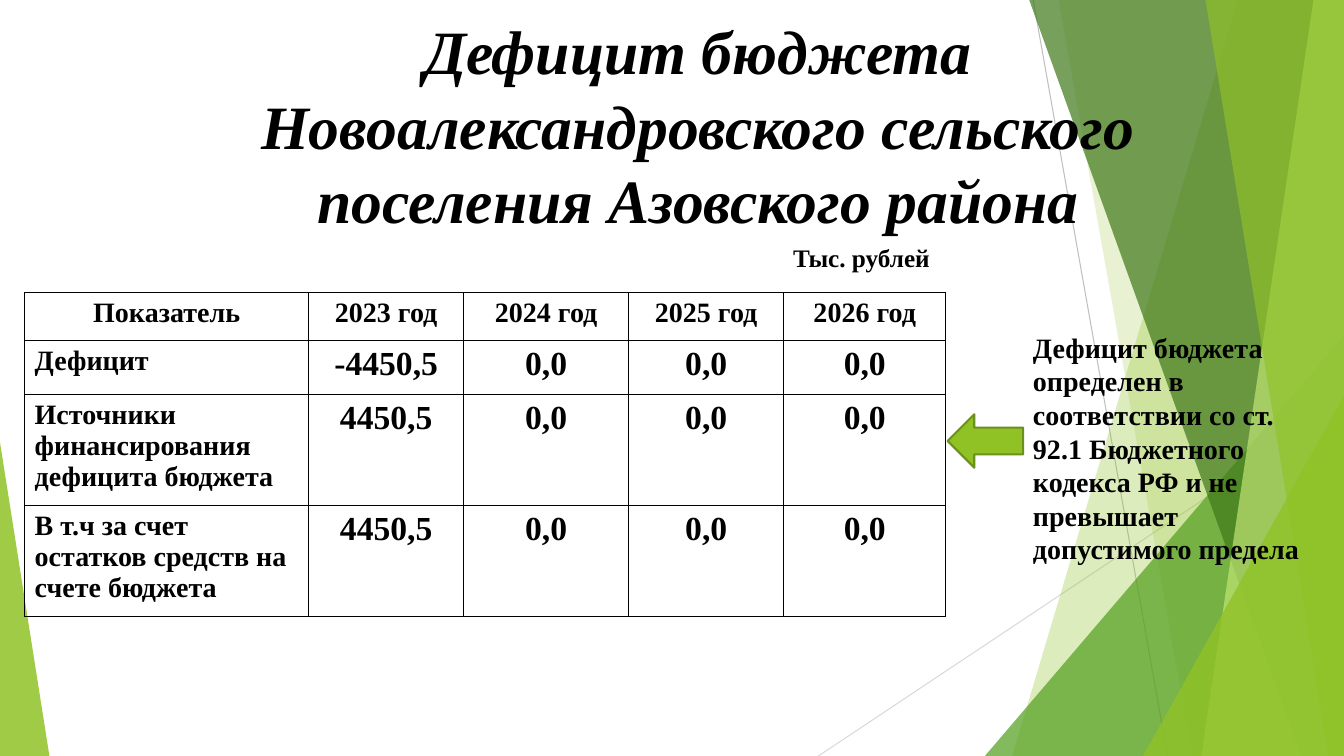
"""Build the budget deficit slide with its table, note and green facet backdrop."""
from lxml.etree import SubElement
from pptx import Presentation
from pptx.dml.color import RGBColor
from pptx.enum.shapes import MSO_CONNECTOR, MSO_SHAPE
from pptx.enum.text import MSO_ANCHOR, MSO_AUTO_SIZE, PP_ALIGN
from pptx.oxml import parse_xml
from pptx.oxml.ns import nsdecls, qn
from pptx.util import Pt

TITLE = "Дефицит бюджета Новоалександровского сельского поселения Азовского района"
UNITS = "Тыс. рублей"
NOTE = ("Дефицит бюджета определен в соответствии со ст. 92.1 Бюджетного "
        "кодекса РФ и не превышает допустимого предела")
ROWS = [
    ("Показатель", "2023 год", "2024 год", "2025 год", "2026 год"),
    ("Дефицит", "-4450,5", "0,0", "0,0", "0,0"),
    ("Источники финансирования дефицита бюджета", "4450,5", "0,0", "0,0", "0,0"),
    ("В т.ч за счет остатков средств на счете бюджета", "4450,5", "0,0", "0,0", "0,0"),
]
COL_WIDTHS = (202.9, 110.7, 117.9, 110.7, 115.9)
ROW_HEIGHTS = (34, 38.7, 79.3, 79.3)

FONT = "Times New Roman"
BLACK = RGBColor(0x00, 0x00, 0x00)
LIME = RGBColor(0x90, 0xC2, 0x26)
OLIVE = RGBColor(0x6B, 0x90, 0x1C)
GREEN = RGBColor(0x54, 0xA0, 0x21)
FOREST = RGBColor(0x3F, 0x78, 0x19)
PALE = RGBColor(0xC0, 0xE4, 0x74)
GRAY = RGBColor(0xBF, 0xBF, 0xBF)
LIGHT_GRAY = RGBColor(0xD9, 0xD9, 0xD9)

WIDTH, HEIGHT, BLEED = 960, 540, -0.6
RAYS = [((738, 0), (834, HEIGHT), GRAY), ((WIDTH, 290), (584.6, HEIGHT), LIGHT_GRAY)]
FACETS = [
    ("panel", (884.3, 723), LIME, 30),
    ("panel", (756, 851.6), LIME, 20),
    ("triangle", (703.5, 239.8, 256.5, 1), GREEN, 72),
    ("panel", (735, 929.5), FOREST, 70),
    ("panel", (938.3, 858.2), PALE, 70),
    ("panel", (861, 949), LIME, 65),
    ("triangle", (816.5, 283, 143.5, 1), LIME, 80),
    ("triangle", (0, 316, 35.3, 0), LIME, 85),
]


def set_font(font, size):
    font.name, font.size, font.bold = FONT, Pt(size), True
    font.color.rgb = BLACK


def add_ray(s, start, end, color):
    line = s.shapes.add_connector(MSO_CONNECTOR.STRAIGHT, *map(Pt, start + end))
    line.line.color.rgb = color
    line.line.width = Pt(0.75)
    SubElement(line.element.spPr, qn("a:effectLst"))


def add_facet(s, kind, geometry, color, opacity):
    if kind == "panel":
        top_x, bottom_x = geometry
        builder = s.shapes.build_freeform(Pt(top_x), Pt(BLEED))
        corners = [(WIDTH, BLEED), (WIDTH, HEIGHT), (bottom_x, HEIGHT)]
        builder.add_line_segments([(Pt(x), Pt(y)) for x, y in corners], close=True)
        sp = builder.convert_to_shape()
    else:
        left, top, width, apex = geometry
        sp = s.shapes.add_shape(MSO_SHAPE.ISOSCELES_TRIANGLE, Pt(left), Pt(top),
                                Pt(width), Pt(HEIGHT - top))
        sp.adjustments[0] = apex
    sp.shadow.inherit = False
    sp.line.fill.background()
    sp.fill.solid()
    sp.fill.fore_color.rgb = color
    srgb = sp.element.spPr.find(qn("a:solidFill")).find(qn("a:srgbClr"))
    SubElement(srgb, qn("a:alpha"), val=str(opacity * 1000))


def add_title(s):
    title = s.shapes.title
    title.left, title.top, title.width, title.height = map(Pt, (111.6, 15, 774, 147.6))
    tf = title.text_frame
    tf.text = TITLE
    tf.word_wrap, tf.auto_size = True, MSO_AUTO_SIZE.NONE
    tf.vertical_anchor = MSO_ANCHOR.MIDDLE
    tf.margin_left = tf.margin_right = tf.margin_top = tf.margin_bottom = 0
    p = tf.paragraphs[0]
    p.alignment, p.line_spacing = PP_ALIGN.CENTER, Pt(53)
    font = p.runs[0].font
    set_font(font, 44)
    font.italic = True
    shadow = parse_xml(
        f'<a:effectLst {nsdecls("a")}><a:outerShdw blurRad="38100" dist="38100" '
        'dir="2700000" algn="tl"><a:srgbClr val="000000"><a:alpha val="43000"/>'
        '</a:srgbClr></a:outerShdw></a:effectLst>')
    p.runs[0].font.fill
    p.runs[0]._r.rPr.find(qn("a:solidFill")).addnext(shadow)
    title.element.getparent().append(title.element)


def add_text(s, text, box, size, wrap):
    tf = s.shapes.add_textbox(*map(Pt, box)).text_frame
    tf.text = text
    tf.word_wrap = wrap
    set_font(tf.paragraphs[0].font, size)
    return tf


def add_borders(cell):
    tc_pr = cell._tc.get_or_add_tcPr()
    for index, side in enumerate(("lnL", "lnR", "lnT", "lnB")):
        tc_pr.insert(index, parse_xml(
            f'<a:{side} {nsdecls("a")} w="12700"><a:solidFill>'
            f'<a:srgbClr val="{BLACK}"/></a:solidFill></a:{side}>'))


def add_deficit_table(s):
    table = s.shapes.add_table(len(ROWS), len(COL_WIDTHS), Pt(17.6), Pt(209),
                               Pt(sum(COL_WIDTHS)), Pt(sum(ROW_HEIGHTS))).table
    for column, width in zip(table.columns, COL_WIDTHS):
        column.width = Pt(width)
    for row, height in zip(table.rows, ROW_HEIGHTS):
        row.height = Pt(height)
    for i, values in enumerate(ROWS):
        for j, value in enumerate(values):
            cell = table.cell(i, j)
            cell.text = value
            cell.fill.background()
            add_borders(cell)
            p = cell.text_frame.paragraphs[0]
            p.alignment = PP_ALIGN.LEFT if i and not j else PP_ALIGN.CENTER
            set_font(p.font, 24 if i and j else 20)


def main():
    prs = Presentation()
    prs.slide_width, prs.slide_height = Pt(WIDTH), Pt(HEIGHT)
    s = prs.slides.add_slide(prs.slide_layouts[5])
    for ray in RAYS:
        add_ray(s, *ray)
    for facet in FACETS:
        add_facet(s, *facet)
    add_title(s)
    note = add_text(s, NOTE, (730.8, 111.6, 218.2, 295.9), 20, True)
    note.vertical_anchor = MSO_ANCHOR.BOTTOM
    note.paragraphs[0].line_spacing = Pt(24)
    add_deficit_table(s)
    add_text(s, UNITS, (559.4, 169.9, 113, 28.8), 18, False)
    arrow = s.shapes.add_shape(MSO_SHAPE.LEFT_ARROW, Pt(676.8), Pt(295.9), Pt(54), Pt(38.2))
    arrow.shadow.inherit = False
    arrow.fill.solid()
    arrow.fill.fore_color.rgb = LIME
    arrow.line.color.rgb = OLIVE
    arrow.line.width = Pt(1.5)
    prs.save("out.pptx")


if __name__ == "__main__":
    main()
